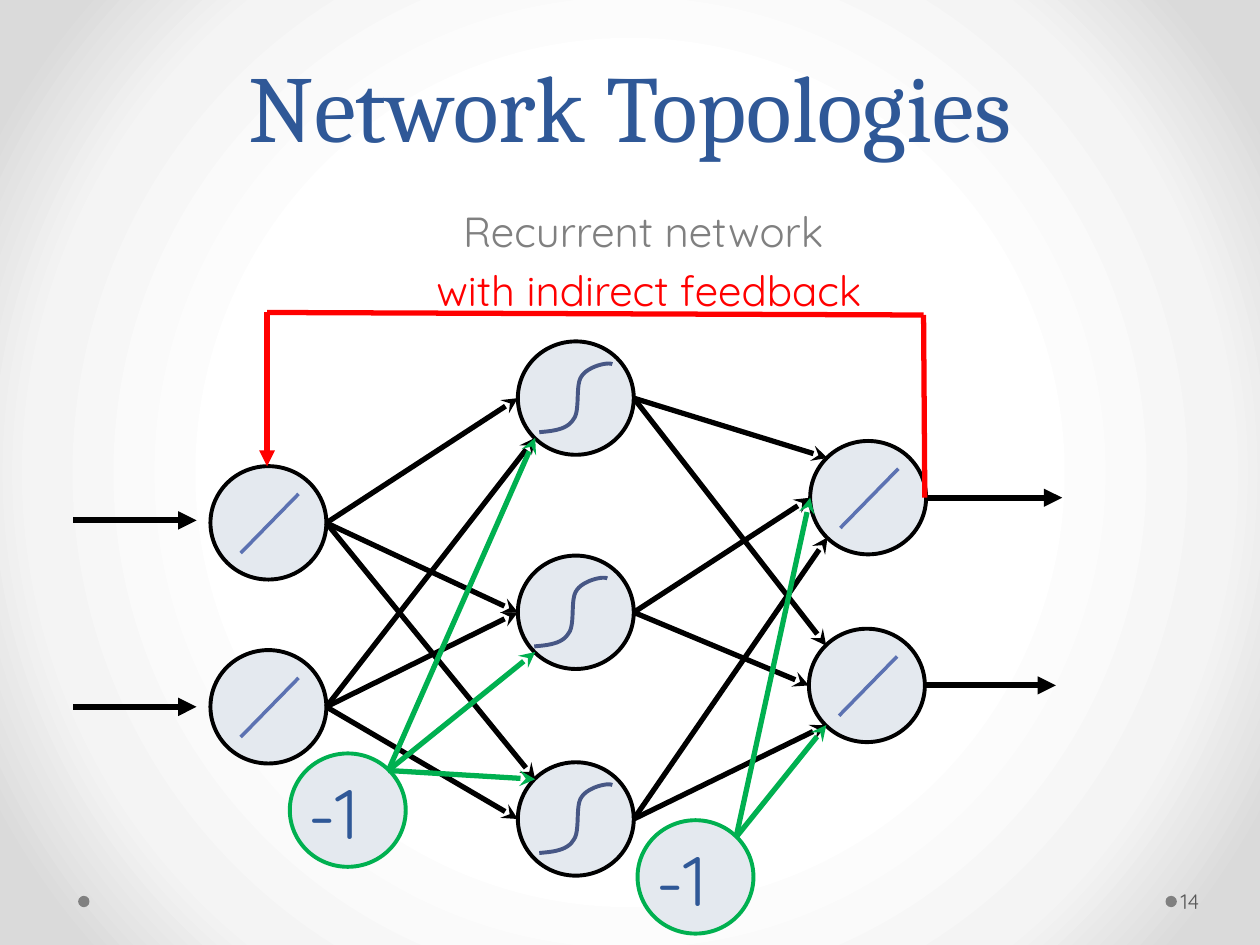
import pptx
import pptx.dml.color
import pptx.enum.shapes
import pptx.enum.text
import pptx.oxml
import pptx.oxml.ns
import pptx.util
from pptx.util import Inches

RGBColor = pptx.dml.color.RGBColor
Align = pptx.enum.text.PP_ALIGN
Anchor = pptx.enum.text.MSO_ANCHOR
ShapeType = pptx.enum.shapes.MSO_SHAPE

BLACK = RGBColor(0x00, 0x00, 0x00)
RED = RGBColor(0xFF, 0x00, 0x00)
GREEN = RGBColor(0x00, 0xB0, 0x50)
NAVY = RGBColor(0x2F, 0x58, 0x97)
GRAY = RGBColor(0x80, 0x80, 0x80)
DARK_GRAY = RGBColor(0x59, 0x59, 0x59)
NODE_FILL = RGBColor(0xE4, 0xE9, 0xEF)
LINEAR_BLUE = RGBColor(0x5C, 0x72, 0xB2)
SIGMOID_BLUE = RGBColor(0x47, 0x57, 0x85)

BACKGROUND_STOPS = [(50, "FFFFFF"), (76, "F4F4F4"), (92, "DADADA")]
NODE_WIDTH, NODE_HEIGHT = 0.92, 0.9
DIAGONAL = 0.35  # share of the node size from its centre to a diagonal port
PORTS = {"W": (-0.5, 0), "E": (0.5, 0), "NW": (-DIAGONAL, -DIAGONAL),
         "SW": (-DIAGONAL, DIAGONAL), "NE": (DIAGONAL, -DIAGONAL)}

# Left and top of each neuron
INPUTS = [(1.67, 3.7), (1.67, 5.16)]
HIDDEN = [(4.11, 2.71), (4.11, 4.41), (4.11, 6.05)]
OUTPUTS = [(6.43, 3.5), (6.42, 4.99)]
BIASES = [(2.3, 5.98), (5.06, 6.51)]

# Port of the target that each source's arrow enters
INPUT_PORTS = [("W", "W", "NW"), ("SW", "W", "W")]
HIDDEN_PORTS = [("NW", "NW"), ("W", "W"), ("SW", "SW")]
BIAS_PORTS = [("SW", "SW", "NW"), ("W", "SW")]

# Bezier segments of the sigmoid, relative to its neuron
SIGMOID_START = (0.17, 0.72)
SIGMOID = [((0.28, 0.71), (0.39, 0.7), (0.44, 0.62)),
           ((0.5, 0.55), (0.45, 0.34), (0.51, 0.27)),
           ((0.56, 0.2), (0.71, 0.16), (0.75, 0.18))]


def port(node, name):
    across, down = PORTS[name]
    return (node[0] + NODE_WIDTH * (0.5 + across),
            node[1] + NODE_HEIGHT * (0.5 + down))


def set_attributes(target, values):
    for name, value in values.items():
        setattr(target, name, value)


def add_paragraph_text(paragraph, text, size, color, font="Quicksand", **layout):
    run = paragraph.add_run()
    run.text = text
    set_attributes(run.font, {"name": font, "size": pptx.util.Pt(size), "bold": False})
    run.font.color.rgb = color
    set_attributes(paragraph, layout)


def add_line(slide, start, end, color, width, head=None):
    line = slide.shapes.add_connector(
        pptx.enum.shapes.MSO_CONNECTOR.STRAIGHT,
        *(Inches(value) for value in (*start, *end)))
    line.line.color.rgb = color
    line.line.width = pptx.util.Pt(width)
    if head:
        tail = pptx.oxml.ns.qn("a:tailEnd")
        line.line._get_or_add_ln().makeelement(tail)
        line.line._get_or_add_ln().append(
            pptx.oxml.parse_xml(f'<a:tailEnd {pptx.oxml.ns.nsdecls("a")} type="{head}"/>'))
    line._element.spPr.append(
        pptx.oxml.parse_xml(f'<a:effectLst {pptx.oxml.ns.nsdecls("a")}/>'))


def add_ellipse(slide, box, fill, outline=None):
    ellipse = slide.shapes.add_shape(ShapeType.OVAL, *(Inches(value) for value in box))
    ellipse.shadow.inherit = False
    ellipse.fill.solid()
    ellipse.fill.fore_color.rgb = fill
    if outline is None:
        ellipse.line.fill.background()
    else:
        ellipse.line.color.rgb = outline
        ellipse.line.width = pptx.util.Pt(2.25)


def add_text_box(slide, box, text, size, color, **frame_format):
    frame = slide.shapes.add_textbox(*(Inches(value) for value in box)).text_frame
    set_attributes(frame, {"word_wrap": True, **frame_format})
    add_paragraph_text(frame.paragraphs[0], text, size, color)


def add_background(slide):
    fill = slide.background.fill
    fill.gradient()
    stops = "".join(f'<a:gs pos="{position * 1000}"><a:srgbClr val="{color}"/></a:gs>'
                    for position, color in BACKGROUND_STOPS)
    gradient = pptx.oxml.parse_xml(
        f'<a:gradFill {pptx.oxml.ns.nsdecls("a")} rotWithShape="1"><a:gsLst>{stops}</a:gsLst>'
        '<a:path path="circle"><a:fillToRect l="50000" t="50000" r="50000" b="50000"/>'
        '</a:path></a:gradFill>')
    old = next(slide._element.iter(pptx.oxml.ns.qn("a:gradFill")))
    old.getparent().replace(old, gradient)


def place_placeholder(placeholder, box, anchor):
    names = ("left", "top", "width", "height")
    set_attributes(placeholder, {name: Inches(value) for name, value in zip(names, box)})
    frame = placeholder.text_frame
    set_attributes(frame, {"vertical_anchor": anchor, "word_wrap": True,
                           "auto_size": pptx.enum.text.MSO_AUTO_SIZE.NONE})
    return frame


def add_heading(slide, title_box, body_box):
    frame = place_placeholder(slide.shapes.title, title_box, Anchor.BOTTOM)
    add_paragraph_text(frame.paragraphs[0], "Network Topologies", 54, NAVY, "Cambria",
                       alignment=Align.CENTER, line_spacing=pptx.util.Pt(58))
    frame = place_placeholder(slide.placeholders[1], body_box, Anchor.TOP)
    lines = [("Recurrent network ", GRAY), ("with indirect feedback", RED)]
    for index, (text, color) in enumerate(lines):
        paragraph = frame.add_paragraph() if index else frame.paragraphs[0]
        add_paragraph_text(paragraph, text, 24, color, alignment=Align.CENTER,
                           space_before=pptx.util.Pt(4.8))
        properties = paragraph._p.get_or_add_pPr()
        properties.set("marL", "0")
        properties.set("indent", "0")
        properties.append(pptx.oxml.parse_xml(f'<a:buNone {pptx.oxml.ns.nsdecls("a")}/>'))


def add_footer(slide, box):
    left, top, width, height = box
    for dot_left in (0.62, left - 0.09):
        add_ellipse(slide, (dot_left, top + 0.16, 0.09, 0.09), GRAY)
    add_text_box(slide, box, "14", 12, DARK_GRAY, vertical_anchor=Anchor.MIDDLE,
                 margin_left=Inches(0.03), margin_right=Inches(0.05))


def add_neuron(slide, node, outline=BLACK):
    add_ellipse(slide, (*node, NODE_WIDTH, NODE_HEIGHT), NODE_FILL, outline)


def add_linear_mark(slide, node):
    left, top = node
    add_line(slide, (left + 0.24, top + 0.69), (left + 0.7, top + 0.22), LINEAR_BLUE, 2)


def add_sigmoid_mark(slide, left, top, steps=12):
    points, start = [SIGMOID_START], SIGMOID_START
    for first, second, end in SIGMOID:
        for step in range(1, steps + 1):
            t = step / steps
            weights = ((1 - t) ** 3, 3 * t * (1 - t) ** 2, 3 * t ** 2 * (1 - t), t ** 3)
            corners = (start, first, second, end)
            points.append(tuple(sum(weight * corner[axis]
                                    for weight, corner in zip(weights, corners))
                                for axis in (0, 1)))
        start = end
    points = [(Inches(left + x), Inches(top + y)) for x, y in points]
    builder = slide.shapes.build_freeform(*points[0], scale=1.0)
    builder.add_line_segments(points[1:], close=False)
    curve = builder.convert_to_shape()
    curve.shadow.inherit = False
    curve.fill.background()
    curve.line.color.rgb = SIGMOID_BLUE
    curve.line.width = pptx.util.Pt(2.25)


def add_links(slide, start, targets, names, color):
    for target, name in zip(targets, names):
        add_line(slide, start, port(target, name), color, 3, "stealth")


def add_network(slide):
    # Neurons
    for node in INPUTS + HIDDEN + OUTPUTS:
        add_neuron(slide, node)
    # Weighted links between layers
    for nodes, targets, ports in ((INPUTS, HIDDEN, INPUT_PORTS),
                                  (HIDDEN, OUTPUTS, HIDDEN_PORTS)):
        for node, names in zip(nodes, ports):
            add_links(slide, port(node, "E"), targets, names, BLACK)
    # Signals in and out
    for y in (4.13, 5.61):
        add_line(slide, (0.58, y), (1.56, y), BLACK, 3.5, "triangle")
    for node, end in zip(OUTPUTS, (8.43, 8.38)):
        x, y = port(node, "E")
        add_line(slide, (x, y), (end, y), BLACK, 3.5, "triangle")
    # Bias neurons
    for node, targets, names in zip(BIASES, (HIDDEN, OUTPUTS), BIAS_PORTS):
        add_neuron(slide, node, GREEN)
        add_links(slide, port(node, "NE"), targets, names, GREEN)
        add_text_box(slide, (node[0] + 0.05, node[1] + 0.08, 0.82, 0.77), "-1", 40, NAVY)
    # Activation marks
    for node in INPUTS + OUTPUTS:
        add_linear_mark(slide, node)
    for (left, top), shift in zip(HIDDEN, (0, -0.04, 0)):
        add_sigmoid_mark(slide, left + shift, top)


def add_feedback(slide):
    corners = [(7.34, 3.95), (7.33, 2.5), (2.12, 2.48), (2.12, 3.7)]
    for start, end, head in zip(corners, corners[1:], (None, None, "triangle")):
        add_line(slide, start, end, RED, 3, head)


def main():
    presentation = pptx.Presentation()
    presentation.slide_width, presentation.slide_height = Inches(10), Inches(7.5)
    slide = presentation.slides.add_slide(presentation.slide_layouts[1])
    add_background(slide)
    add_heading(slide, (0.5, 0, 9, 1.33), (0.58, 1.58, 9.14, 1))
    add_footer(slide, (9.34, 6.95, 0.61, 0.4))
    add_network(slide)
    add_feedback(slide)
    presentation.save("out.pptx")


if __name__ == "__main__":
    main()
